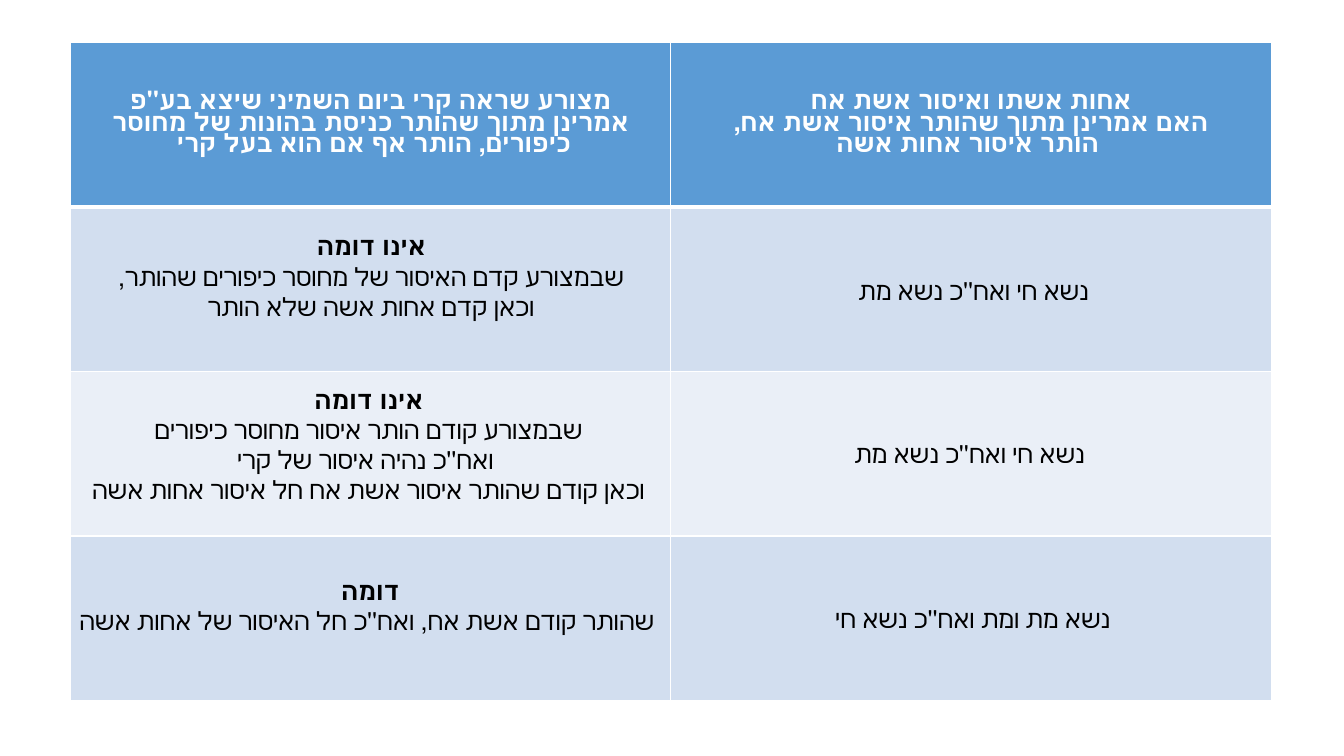
import pptx
import pptx.dml.color
import pptx.enum.text
import pptx.oxml.ns
import pptx.util
from lxml import etree

Pt = pptx.util.Pt
RGBColor = pptx.dml.color.RGBColor
qn = pptx.oxml.ns.qn

WHITE = RGBColor(0xFF, 0xFF, 0xFF)
BLACK = RGBColor(0, 0, 0)
BLUE = RGBColor(0x5B, 0x9B, 0xD5)
BAND = RGBColor(0xD2, 0xDE, 0xEF)
PALE = RGBColor(0xEA, 0xEF, 0xF7)
ROW_FILLS = [BLUE, BAND, PALE, BAND]
FONT = "Calibri"

HEADERS = [
    ["מצורע שראה קרי ביום השמיני שיצא בע''פ",
     "אמרינן מתוך שהותר כניסת בהונות של מחוסר כיפורים, הותר אף אם הוא בעל קרי "],
    ["אחות אשתו ואיסור אשת אח",
     "האם אמרינן מתוך שהותר איסור אשת אח,",
     " הותר איסור אחות אשה"],
]
VERDICTS = [
    ((49, 161.3, 427.7, 94.3),
     ["אינו דומה ",
      "שבמצורע קדם האיסור של מחוסר כיפורים שהותר, ",
      "וכאן קדם אחות אשה שלא הותר "]),
    ((49, 270.7, 424.1, 116.6),
     ["אינו דומה ",
      "שבמצורע קודם הותר איסור מחוסר כיפורים ",
      "ואח''כ נהיה איסור של קרי",
      "וכאן קודם שהותר איסור אשת אח חל איסור אחות אשה "]),
    ((49, 407.5, 426.2, 72.7),
     ["דומה ",
      "שהותר קודם אשת אח, ואח''כ חל האיסור של אחות אשה "]),
]
CASES = [
    ((481.7, 193, 427.7, 51.1), "נשא חי ואח''כ נשא מת"),
    ((483.8, 309.6, 417.6, 51.1), "נשא חי ואח''כ נשא מת"),
    ((481, 427.7, 427.7, 51.1), "נשא מת ומת ואח''כ נשא חי"),
]


def write_lines(tf, lines, color, bold_count, rtl=True, spacing=None):
    for i, line in enumerate(lines):
        p = tf.paragraphs[0] if i == 0 else tf.add_paragraph()
        p.text = line
        p.alignment = pptx.enum.text.PP_ALIGN.CENTER
        if spacing:
            p.line_spacing = spacing
        if rtl:
            p._p.get_or_add_pPr().set("rtl", "1")
        r = p.runs[0]
        r.font.size = Pt(18)
        r.font.name = FONT
        r.font.bold = i < bold_count
        r.font.color.rgb = color
        r.font.language_id = pptx.enum.lang.MSO_LANGUAGE_ID.HEBREW


def add_text(s, box, lines, bold_count=0, rtl=True):
    tf = s.shapes.add_textbox(*map(Pt, box)).text_frame
    tf.word_wrap = True
    write_lines(tf, lines, BLACK, bold_count, rtl)


def style_cell(cell, fill, top, bottom):
    cell.vertical_anchor = pptx.enum.text.MSO_ANCHOR.MIDDLE
    tcPr = cell._tc.get_or_add_tcPr()
    for side, width in (("L", 1), ("R", 1), ("T", top), ("B", bottom)):
        ln = etree.SubElement(tcPr, qn("a:ln" + side), w=str(Pt(width)))
        solid = etree.SubElement(ln, qn("a:solidFill"))
        etree.SubElement(solid, qn("a:srgbClr"), val=str(WHITE))
    cell.fill.solid()
    cell.fill.fore_color.rgb = fill


def add_comparison_table(s):
    rows, cols = len(ROW_FILLS), len(HEADERS)
    table = s.shapes.add_table(
        rows, cols, Pt(50.2), Pt(30.3), Pt(858), Pt(470)).table
    for i, fill in enumerate(ROW_FILLS):
        for j in range(cols):
            style_cell(table.cell(i, j), fill,
                       3 if i == 1 else 1, 3 if i == 0 else 1)
    for j, lines in enumerate(HEADERS):
        write_lines(table.cell(0, j).text_frame, lines, WHITE,
                    len(lines), spacing=0.85)


def main():
    prs = pptx.Presentation()
    prs.slide_width, prs.slide_height = Pt(960), Pt(540)
    s = prs.slides.add_slide(prs.slide_layouts[6])
    add_comparison_table(s)
    for box, lines in VERDICTS:
        add_text(s, box, lines, bold_count=1)
    for box, line in CASES:
        add_text(s, box, [line], rtl=False)
    prs.save("out.pptx")


if __name__ == "__main__":
    import pptx.enum.lang
    main()
